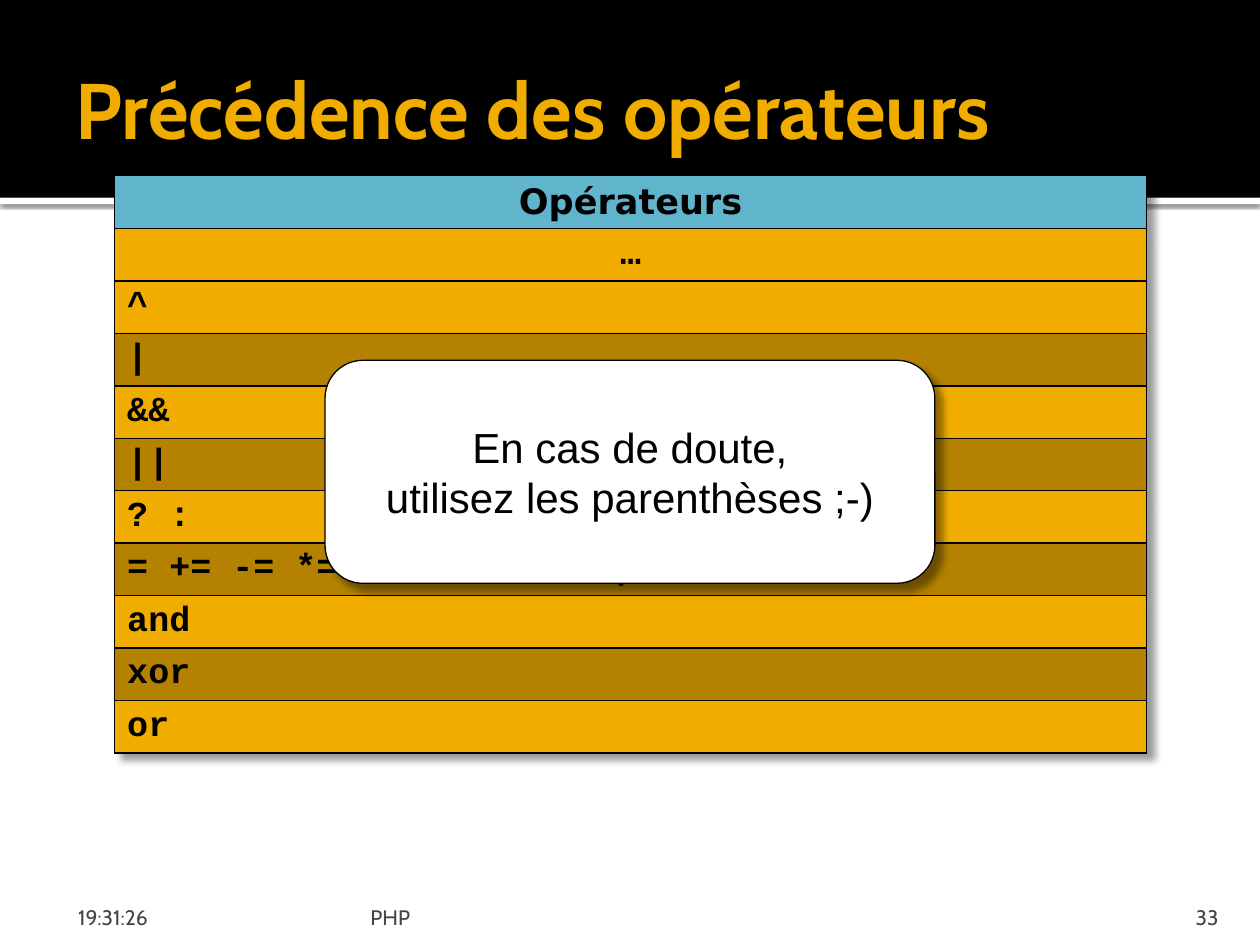
"""Build the slide on operator precedence."""
from lxml import etree
from pptx import Presentation
from pptx.dml.color import RGBColor
from pptx.enum import shapes, text
from pptx.oxml import ns
from pptx.util import Inches, Pt

BLACK = RGBColor(0x00, 0x00, 0x00)
WHITE = RGBColor(0xFF, 0xFF, 0xFF)
AMBER = RGBColor(0xF0, 0xAD, 0x00)
DARK_AMBER = RGBColor(0xB4, 0x82, 0x00)
BLUE = RGBColor(0x60, 0xB5, 0xCC)
GREY = RGBColor(0x45, 0x45, 0x45)

OPERATORS = ["^", "|", "&&", "||", "? :",
             "= += -= *= /= .= %= &= |= ^= <<= >>=", "and", "xor", "or"]
FOOTERS = [
    ("19:31:26", 0.5, 2.33, 0.12, 0.05, text.PP_ALIGN.LEFT),
    ("PHP", 2.89, 6.02, 0.05, 0.05, text.PP_ALIGN.LEFT),
    ("33", 8.97, 0.8, 0.1, 0.1, text.PP_ALIGN.RIGHT),
]


def inches(*lengths):
    """Convert several lengths to inches."""
    return [Inches(length) for length in lengths]


def add_child(parent, tag, **attributes):
    """Append a DrawingML element to a parent."""
    return etree.SubElement(parent, ns.qn(tag), attributes)


def add_shadow(parent, opacity, blur, distance, angle):
    """Append an outer black shadow and return its effect list."""
    effects = add_child(parent, "a:effectLst")
    shadow = add_child(effects, "a:outerShdw", blurRad=str(Pt(blur)),
                       dist=str(Pt(distance)), dir=str(angle * 60000),
                       algn="tl", rotWithShape="0")
    color = add_child(shadow, "a:srgbClr", val=str(BLACK))
    add_child(color, "a:alpha", val=str(opacity * 1000))
    return effects


def set_margins(frame, left, top, right, bottom):
    """Set the four inner margins of a text frame."""
    frame.margin_left, frame.margin_top = inches(left, top)
    frame.margin_right, frame.margin_bottom = inches(right, bottom)


def write(para, wording, size, font, color, bold=False,
          align=text.PP_ALIGN.LEFT):
    """Fill a paragraph and set its font."""
    para.text = wording
    para.alignment = align
    para.font.size = Pt(size)
    para.font.name = font
    para.font.bold = bold
    para.font.color.rgb = color


def add_panel(slide, box, color):
    """Add a plain rectangle without outline."""
    panel = slide.shapes.add_shape(shapes.MSO_SHAPE.RECTANGLE, *box)
    panel.fill.solid()
    panel.fill.fore_color.rgb = color
    panel.line.fill.background()
    return panel


def add_header(slide, box):
    """Add the black band, the white rule under it and the title."""
    left, top, width, height = box
    rule = add_panel(slide, (left, top + height, width, Inches(0.05)), WHITE)
    add_shadow(rule._element.spPr, 60, 2.5, 0.8, 90)
    band = add_panel(slide, box, BLACK)
    band.shadow.inherit = False

    title = slide.shapes.title
    title.left, title.top = left + Inches(0.5), top + Inches(0.17)
    title.width, title.height = width - Inches(1), Inches(1.37)
    slide.shapes._spTree.append(title._element)
    frame = title.text_frame
    frame.vertical_anchor = text.MSO_ANCHOR.MIDDLE
    set_margins(frame, 0.1, 0.05, 0.05, 0.05)
    write(frame.paragraphs[0], "Précédence des opérateurs", 45, "Cabin",
          AMBER, bold=True)


def style_cell(cell, color):
    """Give a cell its fill and black borders."""
    cell.vertical_anchor = text.MSO_ANCHOR.MIDDLE
    properties = cell._tc.get_or_add_tcPr()
    for side in ("a:lnL", "a:lnR", "a:lnT", "a:lnB"):
        border = add_child(properties, side, w=str(Pt(1)))
        fill = add_child(border, "a:solidFill")
        add_child(fill, "a:srgbClr", val=str(BLACK))
    cell.fill.solid()
    cell.fill.fore_color.rgb = color


def add_operator_table(slide, box):
    """Add the one-column table of operators."""
    center, left = text.PP_ALIGN.CENTER, text.PP_ALIGN.LEFT
    rows = [("Opérateurs", "DejaVu Sans", BLUE, center),
            ("…", "Courier New", AMBER, center)]
    rows += [(operator, "Courier New", (AMBER, DARK_AMBER)[index % 2], left)
             for index, operator in enumerate(OPERATORS)]
    table = slide.shapes.add_table(len(rows), 1, *box).table
    properties = table._tbl.tblPr
    properties.insert(0, add_shadow(properties, 40, 4, 6, 45))
    for index, (wording, font, color, align) in enumerate(rows):
        table.rows[index].height = box[3] // len(rows)
        cell = table.cell(index, 0)
        style_cell(cell, color)
        write(cell.text_frame.paragraphs[0], wording, 20, font, BLACK,
              bold=True, align=align)


def add_footer(slide, top, height):
    """Add the time, the subject and the page number."""
    for wording, left, width, inset_left, inset_right, align in FOOTERS:
        box = slide.shapes.add_textbox(Inches(left), top, Inches(width),
                                       height)
        frame = box.text_frame
        frame.word_wrap = True
        frame.vertical_anchor = text.MSO_ANCHOR.BOTTOM
        set_margins(frame, inset_left, 0.05, inset_right, 0)
        write(frame.paragraphs[0], wording, 12, "Cabin", GREY, align=align)


def add_advice(slide, box):
    """Add the rounded advice box over the table."""
    advice = slide.shapes.add_shape(shapes.MSO_SHAPE.ROUNDED_RECTANGLE, *box)
    advice.adjustments[0] = 0.17
    advice.fill.solid()
    advice.fill.fore_color.rgb = WHITE
    advice.line.color.rgb = BLACK
    advice.line.width = Pt(0.75)
    add_shadow(advice._element.spPr, 40, 4, 6, 45)
    frame = advice.text_frame
    frame.word_wrap = False
    frame.auto_size = text.MSO_AUTO_SIZE.SHAPE_TO_FIT_TEXT
    frame.vertical_anchor = text.MSO_ANCHOR.MIDDLE
    set_margins(frame, 0.39, 0.39, 0.39, 0.39)
    first, second = frame.paragraphs[0], frame.add_paragraph()
    for para, wording in ((first, "En cas de doute,"),
                          (second, "utilisez les parenthèses ;-)")):
        write(para, wording, 24, "Arial", BLACK, align=text.PP_ALIGN.CENTER)


def main():
    """Assemble and save the deck."""
    deck = Presentation()
    deck.slide_width, deck.slide_height = inches(10, 7.5)
    slide = deck.slides.add_slide(deck.slide_layouts.get_by_name("Title Only"))
    slide.background.fill.solid()
    slide.background.fill.fore_color.rgb = WHITE
    add_header(slide, inches(0, 0, 10, 1.57))
    add_operator_table(slide, inches(0.91, 1.39, 8.19, 4.58))
    add_footer(slide, *inches(7.08, 0.3))
    add_advice(slide, inches(2.58, 2.86, 4.84, 1.77))
    deck.save("out.pptx")


if __name__ == "__main__":
    main()
